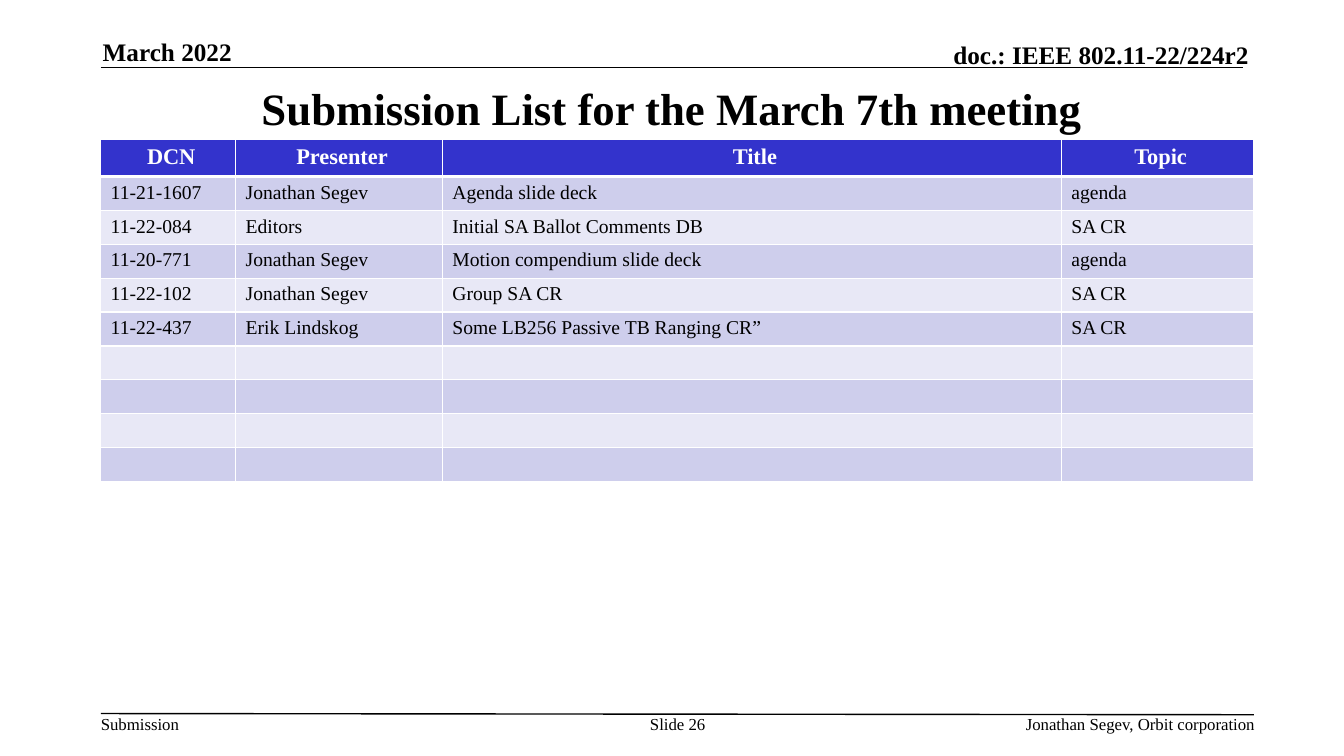
import lxml.etree
import pptx
import pptx.dml.color
import pptx.enum.shapes
import pptx.enum.text
import pptx.oxml.ns
import pptx.util

Cm = pptx.util.Cm
Pt = pptx.util.Pt
qn = pptx.oxml.ns.qn
ALIGN = pptx.enum.text.PP_ALIGN
ANCHOR = pptx.enum.text.MSO_ANCHOR

FONT = "Times New Roman"
COLORS = {
    "text": "000000",
    "white": "FFFFFF",
    "header": "3333CC",
    "odd": "CECEEC",
    "even": "E8E8F6",
}
HEADINGS = ["DCN", "Presenter", "Title", "Topic"]
SUBMISSIONS = [
    ["11-21-1607", "Jonathan Segev", "Agenda slide deck", "agenda"],
    ["11-22-084", "Editors", "Initial SA Ballot Comments DB", "SA CR"],
    ["11-20-771", "Jonathan Segev", "Motion compendium slide deck", "agenda"],
    ["11-22-102", "Jonathan Segev", "Group SA CR", "SA CR"],
    ["11-22-437", "Erik Lindskog", "Some LB256 Passive TB Ranging CR”", "SA CR"],
]
EMPTY_ROWS = 4
COLUMN_WIDTHS = [3.4, 5.21, 15.6, 4.85]
HEADER_HEIGHT = 0.88
ROW_HEIGHT = 0.8


def rgb(name):
    return pptx.dml.color.RGBColor.from_string(COLORS[name])


def write(tf, text, size, bold=False, align=ALIGN.LEFT, color="text"):
    tf.text = text
    p = tf.paragraphs[0]
    p.alignment = align
    for r in p.runs:
        r.font.name = FONT
        r.font.size = Pt(size)
        r.font.bold = bold
        r.font.color.rgb = rgb(color)
    if not text:
        lxml.etree.SubElement(p._p, qn("a:endParaRPr"), sz=str(size * 100))


def place(sp, x, y, w, h):
    sp.left, sp.top, sp.width, sp.height = Cm(x), Cm(y), Cm(w), Cm(h)


def add_title(s, text):
    sp = s.shapes.title
    place(sp, 2.54, 1.91, 28.78, 1.62)
    write(sp.text_frame, text, 32, True, ALIGN.CENTER)
    sp.text_frame.vertical_anchor = ANCHOR.MIDDLE


def add_label(s, text, x, y, w, h, size, bold=False, align=ALIGN.LEFT,
              anchor=ANCHOR.TOP, wrap=True):
    tf = s.shapes.add_textbox(Cm(x), Cm(y), Cm(w), Cm(h)).text_frame
    tf.margin_left = tf.margin_right = tf.margin_top = tf.margin_bottom = 0
    tf.word_wrap = wrap
    tf.vertical_anchor = anchor
    write(tf, text, size, bold, align)


def add_rule(s, x1, y1, x2, y2):
    line = s.shapes.add_connector(
        pptx.enum.shapes.MSO_CONNECTOR.STRAIGHT, Cm(x1), Cm(y1), Cm(x2), Cm(y2))
    line.line.color.rgb = rgb("text")
    line.line.width = Pt(1)
    lxml.etree.SubElement(line._element.spPr, qn("a:effectLst"))


def set_borders(cell, top, bottom):
    tcPr = cell._tc.get_or_add_tcPr()
    widths = {"a:lnL": 1, "a:lnR": 1, "a:lnT": top, "a:lnB": bottom}
    for i, (tag, width) in enumerate(widths.items()):
        ln = lxml.etree.Element(qn(tag), w=str(Pt(width)))
        fill = lxml.etree.SubElement(ln, qn("a:solidFill"))
        lxml.etree.SubElement(fill, qn("a:srgbClr"), val=COLORS["white"])
        tcPr.insert(i, ln)


def format_cell(cell, text, row):
    cell.margin_left = cell.margin_right = Cm(0.25)
    cell.margin_top = cell.margin_bottom = Cm(0.13)
    cell.fill.solid()
    if row == 0:
        cell.margin_right = Cm(0.1)
        cell.fill.fore_color.rgb = rgb("header")
        write(cell.text_frame, text, 16, True, ALIGN.CENTER, "white")
    else:
        cell.fill.fore_color.rgb = rgb("odd" if row % 2 else "even")
        write(cell.text_frame, text, 14)
    set_borders(cell, 3 if row == 1 else 1, 3 if row == 0 else 1)


def add_submission_table(s, x, y):
    rows = [HEADINGS] + SUBMISSIONS + [[""] * len(HEADINGS)] * EMPTY_ROWS
    heights = [HEADER_HEIGHT] + [ROW_HEIGHT] * (len(rows) - 1)
    table = s.shapes.add_table(
        len(rows), len(HEADINGS), Cm(x), Cm(y),
        Cm(sum(COLUMN_WIDTHS)), Cm(sum(heights))).table
    for column, width in zip(table.columns, COLUMN_WIDTHS):
        column.width = Cm(width)
    for i, texts in enumerate(rows):
        table.rows[i].height = Cm(heights[i])
        for j, text in enumerate(texts):
            format_cell(table.cell(i, j), text, i)


def main():
    prs = pptx.Presentation()
    prs.slide_width, prs.slide_height = Cm(33.87), Cm(19.05)
    s = prs.slides.add_slide(prs.slide_layouts[5])

    add_rule(s, 2.54, 1.7, 31.32, 1.7)
    add_rule(s, 2.54, 17.98, 31.6, 18.01)
    add_label(s, "March 2022", 2.59, 0.91, 6.93, 0.76, 18, True,
              anchor=ANCHOR.BOTTOM)
    add_label(s, "doc.: IEEE 802.11-22/224r2", 18.52, 0.99, 12.95, 0.76, 18, True,
              ALIGN.RIGHT, ANCHOR.BOTTOM)
    add_title(s, "Submission List for the March 7th meeting")
    add_submission_table(s, 2.54, 3.51)
    add_label(s, "Submission", 2.54, 17.98, 2.01, 0.51, 12, wrap=False)
    add_label(s, "Slide 26", 16.1, 17.98, 1.96, 1.02, 12, align=ALIGN.CENTER)
    add_label(s, "Jonathan Segev, Orbit corporation", 19.84, 17.98, 11.79, 0.51, 12,
              align=ALIGN.RIGHT)

    prs.save("out.pptx")


if __name__ == "__main__":
    main()
